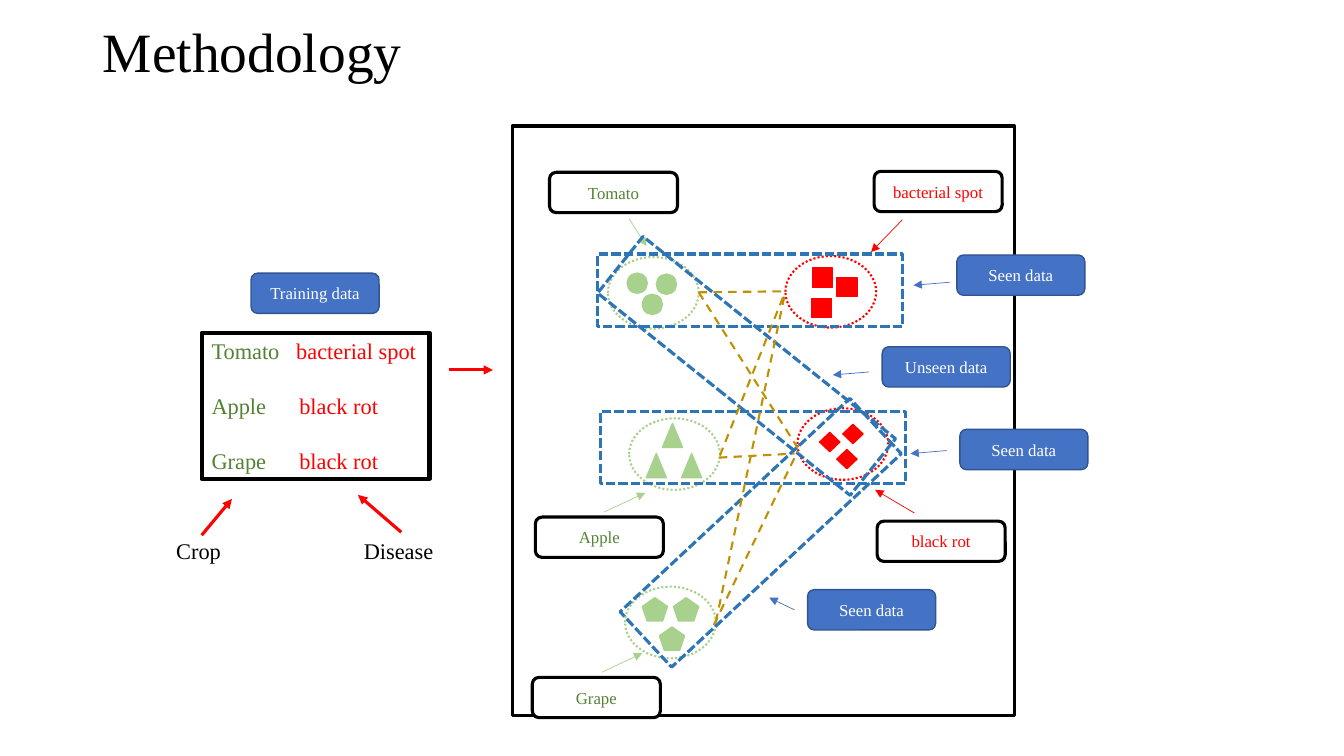
from lxml.etree import SubElement
from pptx import Presentation
from pptx.dml.color import RGBColor
from pptx.enum.dml import MSO_LINE
from pptx.enum.shapes import MSO_CONNECTOR, MSO_SHAPE
from pptx.enum.text import MSO_ANCHOR, MSO_AUTO_SIZE, PP_ALIGN
from pptx.oxml.ns import qn
from pptx.util import Inches, Pt

COLORS = {
    "white": "FFFFFF", "black": "000000", "red": "FF0000", "leaf": "A9D18E",
    "crop": "548235", "data": "4472C4", "data_edge": "325491",
    "pairing": "2E75B6", "relation": "BF9000",
}
COLUMNS, ROWS = 133.3, 75
LABEL_SIZE = (12.7, 4)
CLUSTER_SIZE = (9, 7.1)

CLUSTERS = [
    ("Tomato", "crop", (60.3, 25.5), (54.5, 17.1), ((62.4, 21.7), (64.1, 24.4)),
     MSO_SHAPE.OVAL, (2, 2), [(62.2, 27.1), (65.1, 27.2), (63.7, 29.2)]),
    ("Apple", "crop", (62.4, 41.5), (53.1, 51.3), ((59.9, 50.8), (64, 48.9)),
     MSO_SHAPE.ISOSCELES_TRIANGLE, (2, 2.4), [(65.7, 42), (64.1, 45), (67.6, 45)]),
    ("Grape", "crop", (62, 58.2), (52.8, 67.2), ((59.7, 66.7), (63.7, 64.8)),
     MSO_SHAPE.REGULAR_PENTAGON, (2.5, 2.3), [(63.7, 59.3), (66.8, 59.3), (65.4, 62.2)]),
    ("bacterial spot", "red", (77.9, 25.4), (86.7, 17), ((89.5, 21.8), (86.4, 25)),
     MSO_SHAPE.RECTANGLE, (2, 1.9), [(80.6, 26.6), (83, 27.5), (80.5, 29.6)]),
    ("black rot", "red", (79.1, 40.5), (87, 51.7), ((90.7, 50.9), (86.8, 48.6)),
     MSO_SHAPE.DIAMOND, (2, 1.9), [(81.3, 42.9), (83, 44.6), (83.6, 42.1)]),
]
PAIRINGS = [
    ("Seen data", (59.3, 25.2, 30.2, 7.2), 0, (94.9, 25.3), ((94.2, 28), (90.6, 28.3))),
    ("Seen data", (59.6, 40.8, 30.2, 7.2), 0, (95.2, 42.6), ((93.9, 44.7), (90.3, 45))),
    ("Unseen data", (58, 32.7, 32.1, 7.2), 38.7, (87.5, 34.4), ((86.2, 36.9), (82.6, 37.2))),
    ("Seen data", (59.9, 49.1, 31.1, 7.5), 317.1, (80.1, 58.5), ((78.8, 60.5), (76.3, 59.3))),
]
RELATIONS = [
    ((69.3, 29), (77.9, 28.9)), ((69.3, 29), (79.1, 44.4)),
    ((71.4, 45.2), (77.9, 28.9)), ((71.3, 45.4), (78.8, 45)),
    ((71, 61.7), (77.9, 28.9)), ((70.8, 62), (79.1, 44.8)),
]
TRAINING_PAIRS = [("Tomato", "bacterial spot", 0.84), ("Apple", "black rot", 0.87),
                  ("Grape", "black rot", 0.87)]
AXES = [("Crop", (16.5, 52.8), ((20, 53.1), (23, 49.5))),
        ("Disease", (35.1, 52.8), ((39.8, 52.8), (35.5, 49.1)))]


def color(name):
    return RGBColor.from_string(COLORS[name])


def apply(target, values):
    for attribute, value in values.items():
        setattr(target, attribute, value)


class Board:
    font = "Times New Roman"

    def __init__(self, deck):
        self.column = deck.slide_width / COLUMNS
        self.row = deck.slide_height / ROWS
        self.slide = deck.slides.add_slide(deck.slide_layouts[5])

    def place(self, x, y):
        return round(x * self.column), round(y * self.row)

    def add_words(self, paragraph, words, size, ink):
        run = paragraph.add_run()
        run.text = words
        apply(run.font, {"name": self.font, "size": Pt(size), "bold": False})
        run.font.color.rgb = color(ink)

    def stroke(self, line, ink, weight, dash=None):
        line.color.rgb = color(ink)
        apply(line, {"width": Pt(weight), "dash_style": dash})

    def title(self, words, corner, size):
        heading = self.slide.shapes.title
        left, top = self.place(*corner)
        width, height = self.place(*size)
        apply(heading, {"left": left, "top": top, "width": width, "height": height})
        apply(heading.text_frame, {"auto_size": MSO_AUTO_SIZE.NONE, "word_wrap": True,
                                   "vertical_anchor": MSO_ANCHOR.MIDDLE})
        paragraph = heading.text_frame.paragraphs[0]
        apply(paragraph, {"alignment": PP_ALIGN.LEFT, "line_spacing": 0.8})
        self.add_words(paragraph, words, 39.6, "black")

    def shape(self, kind, corner, size, edge, weight, fill=None, dash=None, turn=0):
        figure = self.slide.shapes.add_shape(kind, *self.place(*corner), *self.place(*size))
        figure.shadow.inherit = False
        figure.rotation = turn
        if fill:
            figure.fill.solid()
            figure.fill.fore_color.rgb = color(fill)
        else:
            figure.fill.background()
        self.stroke(figure.line, edge, weight, dash)
        return figure

    def label(self, words, corner, ink, edge, weight, fill):
        tag = self.shape(MSO_SHAPE.ROUNDED_RECTANGLE, corner, LABEL_SIZE, edge, weight, fill)
        apply(tag.text_frame, {"word_wrap": True, "vertical_anchor": MSO_ANCHOR.MIDDLE})
        paragraph = tag.text_frame.paragraphs[0]
        paragraph.alignment = PP_ALIGN.CENTER
        self.add_words(paragraph, words, 12, ink)

    def data_label(self, words, corner):
        self.label(words, corner, "white", "data_edge", 1, "data")

    def caption(self, words, corner):
        box = self.slide.shapes.add_textbox(*self.place(*corner), *self.place(9.4, 3.7))
        box.text_frame.word_wrap = True
        self.add_words(box.text_frame.paragraphs[0], words, 16, "black")

    def line(self, ends, ink, weight, dash=None, arrow=True):
        start, end = ends
        link = self.slide.shapes.add_connector(
            MSO_CONNECTOR.STRAIGHT, *self.place(*start), *self.place(*end))
        self.stroke(link.line, ink, weight, dash)
        properties = link._element.spPr
        if arrow:
            SubElement(properties.find(qn("a:ln")), qn("a:tailEnd"), type="triangle")
        SubElement(properties, qn("a:effectLst"))

    def training_list(self, pairs, corner, size):
        frame = self.shape(MSO_SHAPE.RECTANGLE, corner, size, "black", 3, "white").text_frame
        apply(frame, {"word_wrap": True, "vertical_anchor": MSO_ANCHOR.TOP, "margin_right": 0})
        for index, (crop, disease, stop) in enumerate(pairs):
            paragraph = frame.add_paragraph() if index else frame.paragraphs[0]
            apply(paragraph, {"alignment": PP_ALIGN.LEFT, "space_before": Pt(20 if index else 0)})
            stops = SubElement(paragraph._p.get_or_add_pPr(), qn("a:tabLst"))
            SubElement(stops, qn("a:tab"), pos=str(Inches(stop)), algn="l")
            self.add_words(paragraph, crop + "\t", 16, "crop")
            self.add_words(paragraph, disease, 16, "red")

    def cluster(self, name, ink, corner, tag, pointer, kind, size, members):
        tint = "leaf" if ink == "crop" else ink
        for member in members:
            self.shape(kind, member, size, tint, 1, tint)
        self.shape(MSO_SHAPE.OVAL, corner, CLUSTER_SIZE, tint, 1.5, dash=MSO_LINE.ROUND_DOT)
        self.line(pointer, tint, 0.5)
        self.label(name, tag, ink, "black", 2.25, "white")

    def pairing(self, name, area, turn, tag, pointer):
        self.shape(MSO_SHAPE.RECTANGLE, area[:2], area[2:], "pairing", 2.25,
                   dash=MSO_LINE.SQUARE_DOT, turn=turn)
        self.line(pointer, "data", 0.5)
        self.data_label(name, tag)


def main():
    deck = Presentation()
    apply(deck, {"slide_width": Inches(13.33), "slide_height": Inches(7.5)})
    board = Board(deck)
    board.title("Methodology", (9.2, 2.2), (115, 6.9))
    board.shape(MSO_SHAPE.RECTANGLE, (50.8, 12.5), (49.8, 58.5), "black", 2.25)
    board.training_list(TRAINING_PAIRS, (20, 33), (22.6, 14.5))
    board.data_label("Training data", (24.9, 27.1))
    board.line(((44.5, 36.7), (48.9, 36.7)), "red", 2.25)
    for name, corner, pointer in AXES:
        board.caption(name, corner)
        board.line(pointer, "red", 2.25)
    for cluster in CLUSTERS:
        board.cluster(*cluster)
    for pairing in PAIRINGS:
        board.pairing(*pairing)
    for ends in RELATIONS:
        board.line(ends, "relation", 1.5, MSO_LINE.DASH, arrow=False)
    deck.save("out.pptx")


if __name__ == "__main__":
    main()
